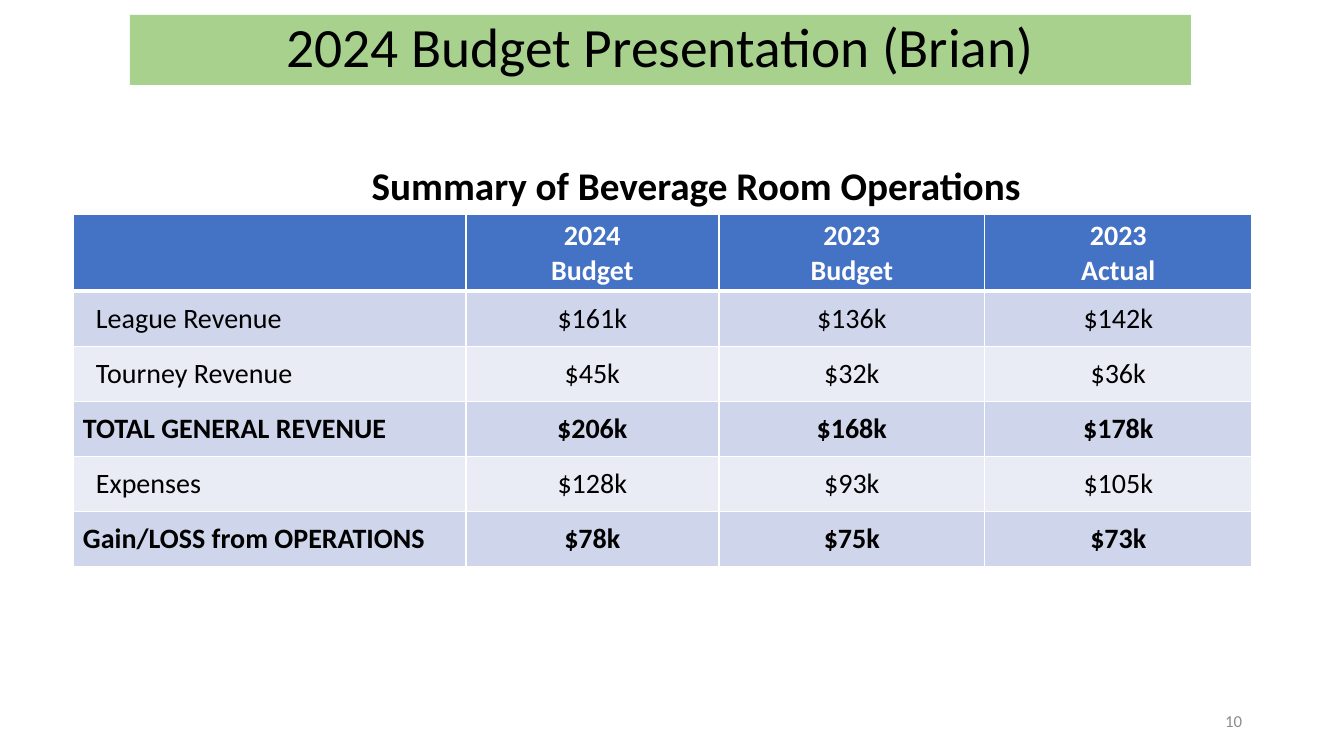
from lxml import etree
from pptx import Presentation
from pptx import util as u
from pptx.dml.color import RGBColor
from pptx.enum import shapes, text
from pptx.oxml.ns import qn

# Content
TITLE = "2024 Budget Presentation (Brian)"
SUMMARY = "Summary of Beverage Room Operations"
PAGE = "10"
HEADINGS = ("", "2024\nBudget", "2023\nBudget", "2023\nActual")
LINES = [  # label, values, is a total
    ("League Revenue", ("$161k", "$136k", "$142k"), False),
    ("Tourney Revenue", ("$45k", "$32k", "$36k"), False),
    ("TOTAL GENERAL REVENUE", ("$206k", "$168k", "$178k"), True),
    ("Expenses", ("$128k", "$93k", "$105k"), False),
    ("Gain/LOSS from OPERATIONS", ("$78k", "$75k", "$73k"), True),
]

# Format and layout, lengths in px
FONT = "Calibri"
BLACK, WHITE, GREY = "000000", "FFFFFF", "8C8C8C"
GREEN, BLUE, BANDS = "A9D18E", "4472C4", ("CFD5EA", "E9EBF5")
COLUMNS = (393, 253, 266, 267)
HEAD_HEIGHT, LINE_HEIGHT = 77, 55
TABLE_LEFT, TABLE_TOP = 73, 214
CELL_MARGIN, INDENT = 10, 13
LEFT, CENTER, RIGHT = text.PP_ALIGN.LEFT, text.PP_ALIGN.CENTER, text.PP_ALIGN.RIGHT
MIDDLE, TOP = text.MSO_ANCHOR.MIDDLE, text.MSO_ANCHOR.TOP


def px(n):
    return u.Emu(round(n * 914400 / 100.8))


def color(hex_code):
    return RGBColor.from_string(hex_code)


def write(frame, words, size, hex_code, align, bold=False):
    paragraph = frame.paragraphs[0]
    paragraph.text = words
    paragraph.alignment = align
    for run in paragraph.runs:
        for key, value in dict(name=FONT, size=u.Pt(size), bold=bold).items():
            setattr(run.font, key, value)
        run.font.color.rgb = color(hex_code)
    return paragraph


def add_text(box, anchor, *style):
    frame = slide.shapes.add_textbox(*map(px, box)).text_frame
    frame.word_wrap = True
    frame.vertical_anchor = anchor
    write(frame, *style)


def add_borders(cell, widths):
    props = cell._tc.get_or_add_tcPr()
    for place, (side, width) in enumerate(widths.items()):
        line = etree.Element(qn("a:ln" + side), w=str(u.Pt(width)))
        fill = etree.SubElement(line, qn("a:solidFill"))
        etree.SubElement(fill, qn("a:srgbClr"), val=WHITE)
        props.insert(place, line)


deck = Presentation()
deck.slide_width, deck.slide_height = px(1344), px(756)
slide = deck.slides.add_slide(deck.slide_layouts[6])

# Title bar
bar = slide.shapes.add_shape(shapes.MSO_SHAPE.RECTANGLE, *map(px, (130, 15, 1061, 70)))
bar.shadow.inherit = False
bar.fill.solid()
bar.fill.fore_color.rgb = color(GREEN)
bar.line.fill.background()
bar.text_frame.vertical_anchor = MIDDLE
write(bar.text_frame, TITLE, 39.6, BLACK, CENTER).line_spacing = 0.9

# Summary heading and page number
add_text((117, 156, 1158, 58), TOP, SUMMARY, 28, BLACK, CENTER, True)
add_text((950, 701, 302, 40), MIDDLE, PAGE, 12, GREY, RIGHT)

# Table
heights = [HEAD_HEIGHT] + [LINE_HEIGHT] * len(LINES)
table = slide.shapes.add_table(
    len(heights), len(COLUMNS),
    *map(px, (TABLE_LEFT, TABLE_TOP, sum(COLUMNS), sum(heights)))).table
for column, width in zip(table.columns, COLUMNS):
    column.width = px(width)
for row, height in zip(table.rows, heights):
    row.height = px(height)

rows = [(HEADINGS, True)] + [((label, *values), total) for label, values, total in LINES]
for r, (entries, bold) in enumerate(rows):
    for c, words in enumerate(entries):
        cell = table.cell(r, c)
        cell.vertical_anchor = MIDDLE
        cell.margin_left = px(CELL_MARGIN + (INDENT if c == 0 and not bold else 0))
        cell.fill.solid()
        cell.fill.fore_color.rgb = color(BANDS[(r - 1) % 2] if r else BLUE)
        write(cell.text_frame, words, 20, BLACK if r else WHITE,
              LEFT if r and c == 0 else CENTER, bold)
        add_borders(cell, {"L": 1, "R": 1, "T": 3 if r == 1 else 1, "B": 1 if r else 3})

deck.save("out.pptx")
